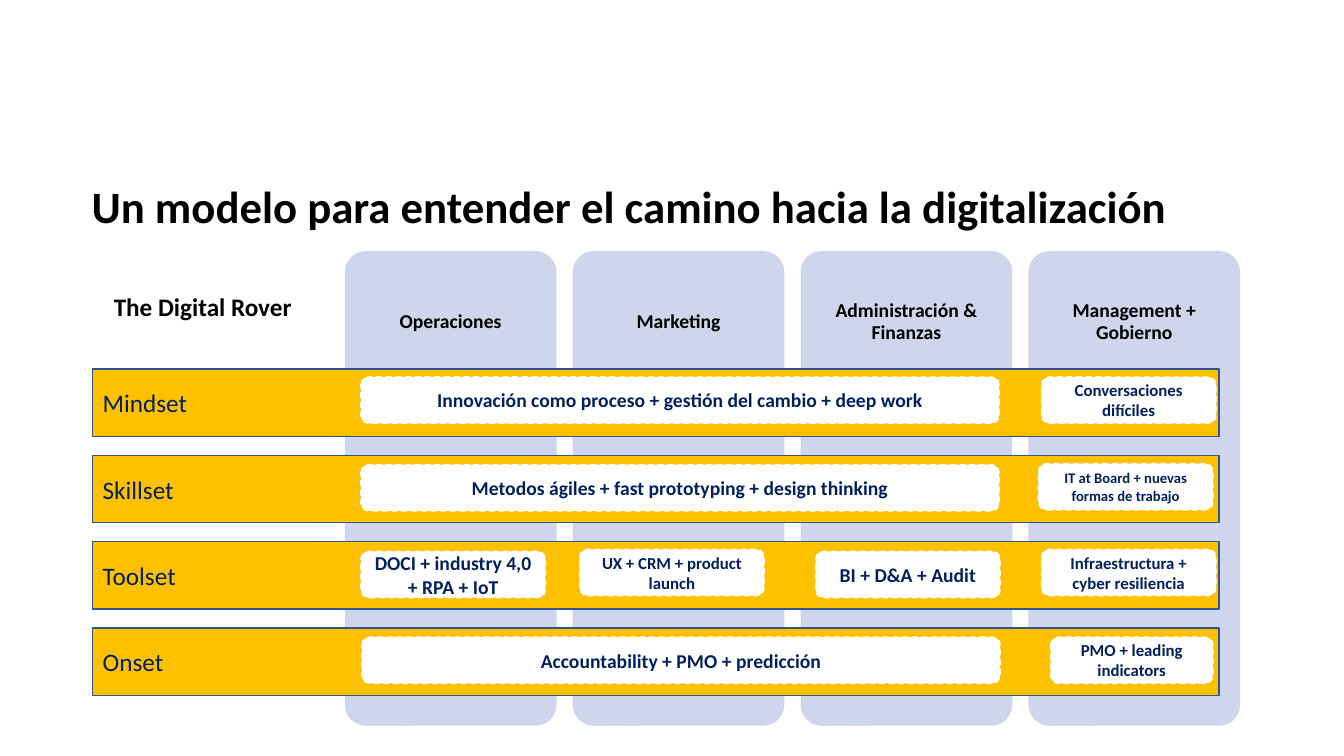
from pptx import Presentation
from pptx.dml.color import RGBColor
from pptx.enum.dml import MSO_LINE
from pptx.enum.shapes import MSO_SHAPE as SHAPE
from pptx.enum.text import MSO_ANCHOR as ANCHOR, PP_ALIGN as ALIGN
from pptx.util import Inches, Pt

BLACK = RGBColor(0x00, 0x00, 0x00)
WHITE = RGBColor(0xFF, 0xFF, 0xFF)
NAVY = RGBColor(0x00, 0x20, 0x60)
LAVENDER = RGBColor(0xCF, 0xD5, 0xEA)
AMBER = RGBColor(0xFF, 0xC0, 0x00)
BLUE = RGBColor(0x32, 0x54, 0x91)

prs = Presentation()
prs.slide_width, prs.slide_height = Inches(13.33), Inches(7.5)
s = prs.slides.add_slide(prs.slide_layouts[6])


def add_box(kind, x, y, w, h, fill, line=None):
    sp = s.shapes.add_shape(kind, Inches(x), Inches(y), Inches(w), Inches(h))
    sp.shadow.inherit = False
    sp.fill.solid()
    sp.fill.fore_color.rgb = fill
    if line is None:
        sp.line.fill.background()
    else:
        sp.line.color.rgb = line
        sp.line.width = Pt(1)
    return sp


def write(sp, text, size, color, bold=True, align=ALIGN.LEFT, anchor=ANCHOR.MIDDLE, spacing=1.0):
    tf = sp.text_frame
    tf.word_wrap = True
    tf.vertical_anchor = anchor
    p = tf.paragraphs[0]
    p.alignment = align
    p.line_spacing = spacing
    r = p.add_run()
    r.text = text
    r.font.color.rgb = color
    for name, value in {"name": "Calibri", "size": Pt(size), "bold": bold}.items():
        setattr(r.font, name, value)
    return tf


# Title
title = s.shapes.add_textbox(Inches(0.81), Inches(1.77), Inches(11.5), Inches(0.61))
write(title, "Un modelo para entender el camino hacia la digitalización", 32, BLACK, spacing=0.9)

# Business area columns
areas = ["Operaciones", "Marketing", "Administración & Finanzas", "Management + Gobierno"]
for i, area in enumerate(areas):
    x = 3.42 + 2.26 * i
    column = add_box(SHAPE.ROUNDED_RECTANGLE, x, 2.49, 2.1, 4.71, LAVENDER)
    column.adjustments[0] = 0.1
    heading = s.shapes.add_textbox(Inches(x), Inches(2.49), Inches(2.1), Inches(1.41))
    tf = write(heading, area, 14, BLACK, align=ALIGN.CENTER, spacing=0.9)
    for side in ("left", "right", "top", "bottom"):
        setattr(tf, f"margin_{side}", Inches(0.06))

# Rows of the model
for i, row in enumerate(["Mindset", "Skillset", "Toolset", "Onset"]):
    band = add_box(SHAPE.RECTANGLE, 0.92, 3.66 + 0.857 * i, 11.17, 0.67, AMBER, BLUE)
    write(band, row, 18, NAVY, bold=False)

# Practices: left, top, width, text size, text
practices = [
    (3.58, 3.74, 6.33, 14, "Innovación como proceso + gestión del cambio + deep work"),
    (10.33, 3.74, 1.73, 12, "Conversaciones difíciles"),
    (3.58, 4.61, 6.33, 14, "Metodos ágiles + fast prototyping + design thinking"),
    (10.3, 4.6, 1.73, 10.5, "IT at Board + nuevas formas de trabajo"),
    (3.58, 5.47, 1.83, 14, "DOCI + industry 4,0 + RPA + IoT"),
    (5.75, 5.45, 1.83, 12, "UX + CRM + product launch"),
    (8.09, 5.47, 1.83, 14, "BI + D&A + Audit"),
    (10.33, 5.45, 1.73, 12, "Infraestructura + cyber resiliencia"),
    (3.59, 6.32, 6.33, 14, "Accountability + PMO + predicción"),
    (10.42, 6.32, 1.61, 12, "PMO + leading indicators"),
]
for x, y, w, size, text in practices:
    practice = add_box(SHAPE.ROUNDED_RECTANGLE, x, y, w, 0.46, WHITE, WHITE)
    practice.line.dash_style = MSO_LINE.DASH
    write(practice, text, size, NAVY, align=ALIGN.CENTER)

# Model name
model = s.shapes.add_textbox(Inches(1.03), Inches(2.84), Inches(2.28), Inches(0.4))
write(model, "The Digital Rover", 18, BLACK, anchor=ANCHOR.TOP)

prs.save("out.pptx")
